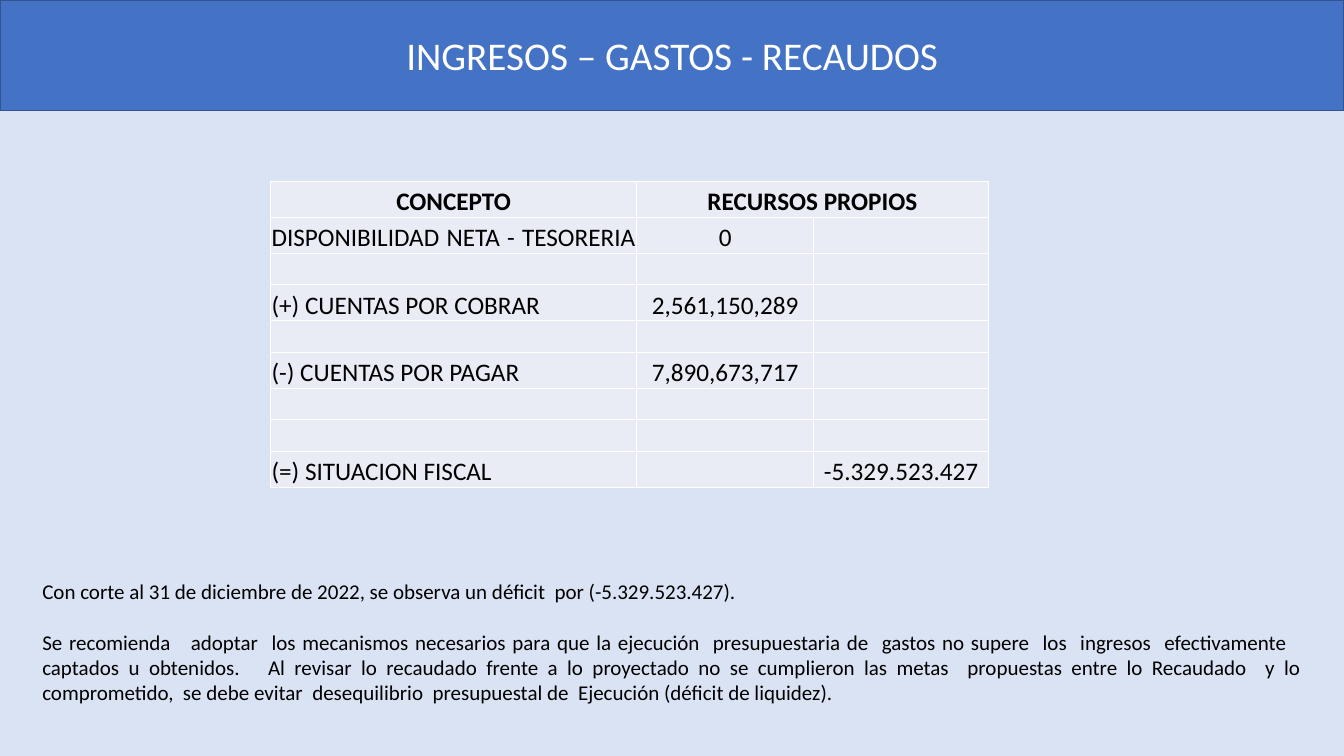
from dataclasses import dataclass

from lxml.etree import SubElement
from pptx import Presentation
from pptx.dml.color import RGBColor
from pptx.enum.text import MSO_ANCHOR, MSO_AUTO_SIZE, PP_ALIGN
from pptx.oxml.ns import qn
from pptx.util import Pt


@dataclass(frozen=True)
class Theme:
    font: str = "Calibri"
    background: str = "DAE3F3"
    banner: str = "4472C4"
    banner_edge: str = "325491"
    cell: str = "E9EBF5"
    white: str = "FFFFFF"
    black: str = "000000"
    title_size: float = 28
    table_size: float = 18
    remark_size: float = 15


THEME = Theme()
HEADING = "INGRESOS – GASTOS - RECAUDOS"
CONCEPTS = [
    ["CONCEPTO", "RECURSOS PROPIOS", ""],
    ["DISPONIBILIDAD NETA - TESORERIA ", " 0 ", ""],
    ["", "", ""],
    ["(+) CUENTAS POR COBRAR", "2,561,150,289", ""],
    ["", "", ""],
    ["(-) CUENTAS POR PAGAR", "7,890,673,717", ""],
    ["", "", ""],
    ["", "", ""],
    ["(=) SITUACION FISCAL", "", "-5.329.523.427"],
]
REMARKS = [
    "Con corte al 31 de diciembre de 2022, se observa un déficit  por (-5.329.523.427).",
    "Se recomienda   adoptar  los mecanismos necesarios para que la ejecución  "
    "presupuestaria de  gastos no supere  los  ingresos  efectivamente   captados u "
    "obtenidos.   Al revisar lo recaudado frente a lo proyectado no se cumplieron las "
    "metas  propuestas entre lo Recaudado  y lo comprometido,  se debe evitar  "
    "desequilibrio  presupuestal de  Ejecución (déficit de liquidez).",
]
COLUMN_WIDTHS = [261.4, 126.7, 124.6]
FILLED_ROW, EMPTY_ROW = 25.7, 22.3


def assign(target, values):
    for name, value in values.items():
        setattr(target, name, value)


def place(target, box):
    assign(target, dict(zip(("left", "top", "width", "height"), map(Pt, box))))


def paint(fill, color):
    fill.solid()
    fill.fore_color.rgb = RGBColor.from_string(color)


def write(paragraph, text, size, color, bold=False, **layout):
    run = paragraph.add_run()
    run.text = text
    assign(run.font, {"name": THEME.font, "size": Pt(size), "bold": bold})
    run.font.color.rgb = RGBColor.from_string(color)
    assign(paragraph, layout)


def add_banner(slide, box):
    banner = slide.shapes.title
    place(banner, box)
    paint(banner.fill, THEME.banner)
    paint(banner.line.fill, THEME.banner_edge)
    banner.line.width = Pt(1)
    assign(banner.text_frame, {
        "vertical_anchor": MSO_ANCHOR.MIDDLE,
        "auto_size": MSO_AUTO_SIZE.NONE,
        "word_wrap": True,
    })
    write(banner.text_frame.paragraphs[0], HEADING, THEME.title_size, THEME.white,
          alignment=PP_ALIGN.CENTER)


def add_borders(cell):
    properties = cell._tc.get_or_add_tcPr()
    for side in ("lnL", "lnR", "lnT", "lnB"):
        border = SubElement(properties, qn(f"a:{side}"), w=str(Pt(1)))
        color = SubElement(border, qn("a:solidFill"))
        SubElement(color, qn("a:srgbClr"), val=THEME.white)


def concept_alignment(row, column):
    if row == 0 or column > 0:
        return PP_ALIGN.CENTER
    return PP_ALIGN.JUSTIFY if row == 1 else PP_ALIGN.LEFT


def add_fiscal_table(slide, box):
    frame = slide.shapes.add_table(len(CONCEPTS), len(COLUMN_WIDTHS), *map(Pt, box))
    table = frame.table
    assign(table, {"first_row": False, "horz_banding": False})
    for column, width in zip(table.columns, COLUMN_WIDTHS):
        column.width = Pt(width)
    for r, texts in enumerate(CONCEPTS):
        table.rows[r].height = Pt(FILLED_ROW if any(texts) else EMPTY_ROW)
        for c, text in enumerate(texts):
            cell = table.cell(r, c)
            add_borders(cell)
            paint(cell.fill, THEME.cell)
            assign(cell, {
                "margin_left": Pt(0.7),
                "margin_right": Pt(0.7),
                "margin_top": Pt(0.5),
                "margin_bottom": Pt(0),
                "vertical_anchor": MSO_ANCHOR.BOTTOM if (r, c) == (1, 0) else MSO_ANCHOR.MIDDLE,
            })
            if text:
                write(cell.text_frame.paragraphs[0], text, THEME.table_size, THEME.black,
                      bold=r == 0, alignment=concept_alignment(r, c), line_spacing=1.15)
    table.cell(0, 1).merge(table.cell(0, 2))


def add_remarks(slide, box):
    remarks = slide.placeholders[1]
    place(remarks, box)
    frame = remarks.text_frame
    assign(frame, {
        "vertical_anchor": MSO_ANCHOR.TOP,
        "auto_size": MSO_AUTO_SIZE.NONE,
        "word_wrap": True,
    })
    for index, text in enumerate(REMARKS):
        paragraph = frame.add_paragraph() if index else frame.paragraphs[0]
        write(paragraph, text, THEME.remark_size, THEME.black, alignment=PP_ALIGN.JUSTIFY,
              line_spacing=1.0, space_before=Pt(18.3 if index else 0))
        properties = paragraph._p.get_or_add_pPr()
        properties.set("marL", "0")
        properties.set("indent", "0")
        SubElement(properties, qn("a:buNone"))


def main():
    deck = Presentation()
    assign(deck, {"slide_width": Pt(960), "slide_height": Pt(540)})
    slide = deck.slides.add_slide(deck.slide_layouts[1])
    paint(slide.background.fill, THEME.background)
    add_banner(slide, (0, 0, 960, 79))
    add_fiscal_table(slide, (193.3, 129.4, sum(COLUMN_WIDTHS), 217.7))
    add_remarks(slide, (23, 409.7, 913.7, 98))
    deck.save("out.pptx")


if __name__ == "__main__":
    main()
